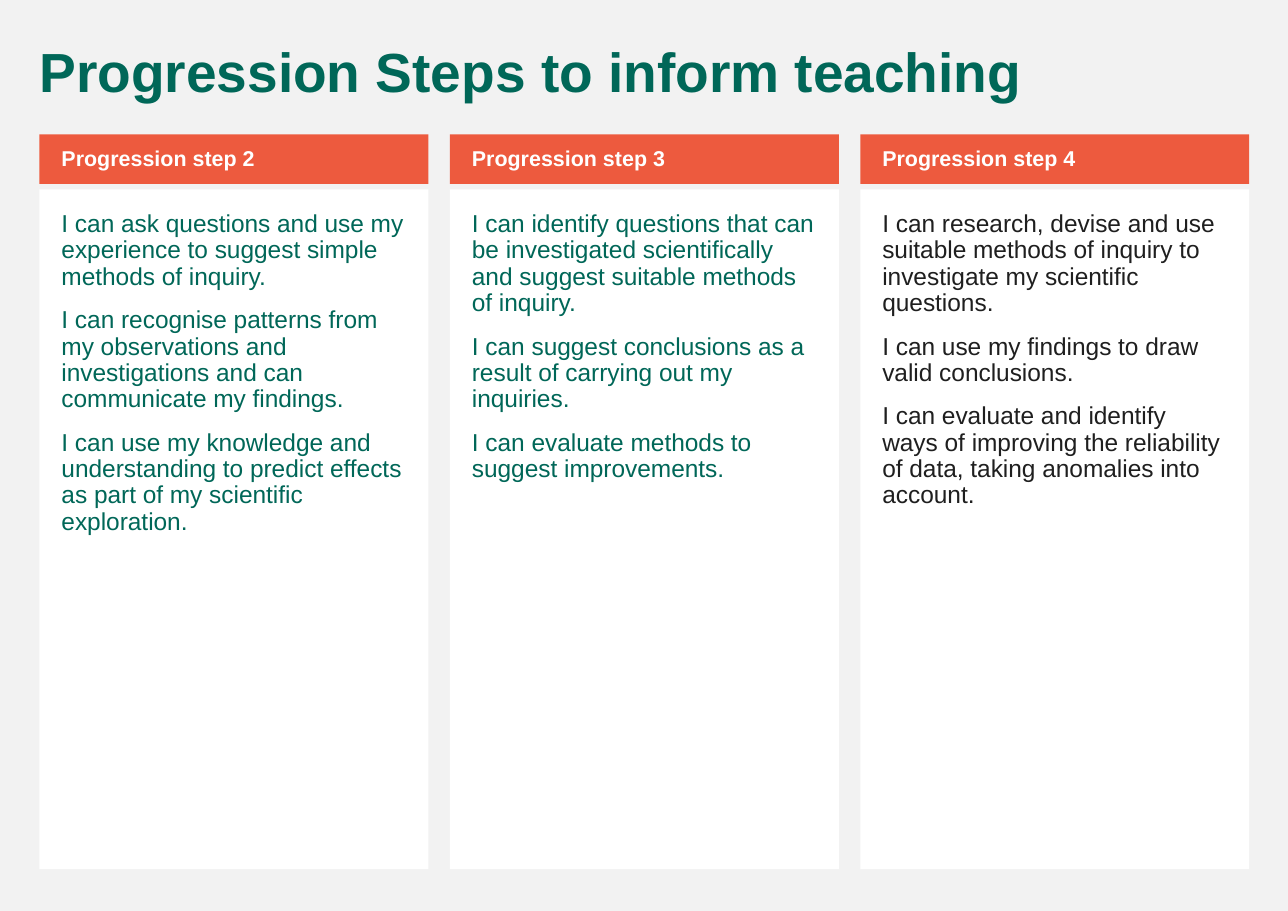
from pptx import Presentation
from pptx.dml.color import RGBColor
from pptx.enum.shapes import MSO_SHAPE
from pptx.enum.text import MSO_ANCHOR, PP_ALIGN
from pptx.util import Pt

RECTANGLE = MSO_SHAPE.RECTANGLE
TOP, MIDDLE = MSO_ANCHOR.TOP, MSO_ANCHOR.MIDDLE
LEFT = PP_ALIGN.LEFT

COLORS = {
    "background": "F2F2F2",
    "green": "006758",
    "orange": "ED5A3E",
    "white": "FFFFFF",
    "dark": "1F1F1F",
}

STEPS = [
    ("Progression step 2", "green", [
        "I can ask questions and use my experience to suggest simple methods of inquiry.",
        "I can recognise patterns from my observations and investigations and can communicate my findings.",
        "I can use my knowledge and understanding to predict effects as part of my scientific exploration.",
    ]),
    ("Progression step 3", "green", [
        "I can identify questions that can be investigated scientifically and suggest suitable methods of inquiry.",
        "I can suggest conclusions as a result of carrying out my inquiries.",
        "I can evaluate methods to suggest improvements.",
    ]),
    ("Progression step 4", "dark", [
        "I can research, devise and use suitable methods of inquiry to investigate my scientific questions.",
        "I can use my findings to draw valid conclusions.",
        "I can evaluate and identify ways of improving the reliability of data, taking anomalies into account.",
    ]),
]

COLUMN_WIDTH = 254.2
COLUMN_GAP = 14
HEADER_HEIGHT = 32.4
HEADER_GAP = 3.6


def rgb(name):
    return RGBColor.from_string(COLORS[name])


def write_text(shape, texts, size, color, bold=False, anchor=TOP,
               insets=(7.2, 3.6, 7.2, 3.6)):
    frame = shape.text_frame
    frame.word_wrap = True
    frame.vertical_anchor = anchor
    (frame.margin_left, frame.margin_top,
     frame.margin_right, frame.margin_bottom) = map(Pt, insets)
    frame.text = "\n".join(texts)
    for paragraph in frame.paragraphs:
        paragraph.alignment = LEFT
        paragraph.line_spacing = 0.9
        paragraph.space_before = Pt(11)
        paragraph.font.name = "Arial"
        paragraph.font.size = Pt(size)
        paragraph.font.bold = bold
        paragraph.font.color.rgb = rgb(color)


def add_panel(slide, left, top, width, height, fill):
    shape = slide.shapes.add_shape(RECTANGLE, Pt(left), Pt(top), Pt(width), Pt(height))
    shape.shadow.inherit = False
    shape.fill.solid()
    shape.fill.fore_color.rgb = rgb(fill)
    shape.line.fill.background()
    return shape


def add_title(slide, left, top, width, height):
    title = slide.shapes.add_textbox(Pt(left), Pt(top), Pt(width), Pt(height))
    write_text(title, ["Progression Steps to inform teaching"], 36, "green", bold=True)


def add_step(slide, left, top, width, height, heading, color, statements):
    body_offset = HEADER_HEIGHT + HEADER_GAP
    body = add_panel(slide, left, top + body_offset, width, height - body_offset, "white")
    write_text(body, statements, 16, color, insets=(14.4, 14.4, 14.4, 14.4))
    header = add_panel(slide, left, top, width, HEADER_HEIGHT, "orange")
    write_text(header, [heading], 14, "white", bold=True, anchor=MIDDLE,
               insets=(14.4, 3.6, 7.2, 3.6))


def add_steps(slide, left, top, height):
    for index, step in enumerate(STEPS):
        column_left = left + index * (COLUMN_WIDTH + COLUMN_GAP)
        add_step(slide, column_left, top, COLUMN_WIDTH, height, *step)


def main():
    presentation = Presentation()
    presentation.slide_width = Pt(841.7)
    presentation.slide_height = Pt(595.4)
    slide = presentation.slides.add_slide(presentation.slide_layouts[6])
    slide.background.fill.solid()
    slide.background.fill.fore_color.rgb = rgb("background")
    add_steps(slide, 25.8, 87.8, 480.3)
    add_title(slide, 18.7, 25.9, 797.8, 46.8)
    presentation.save("out.pptx")


if __name__ == "__main__":
    main()
